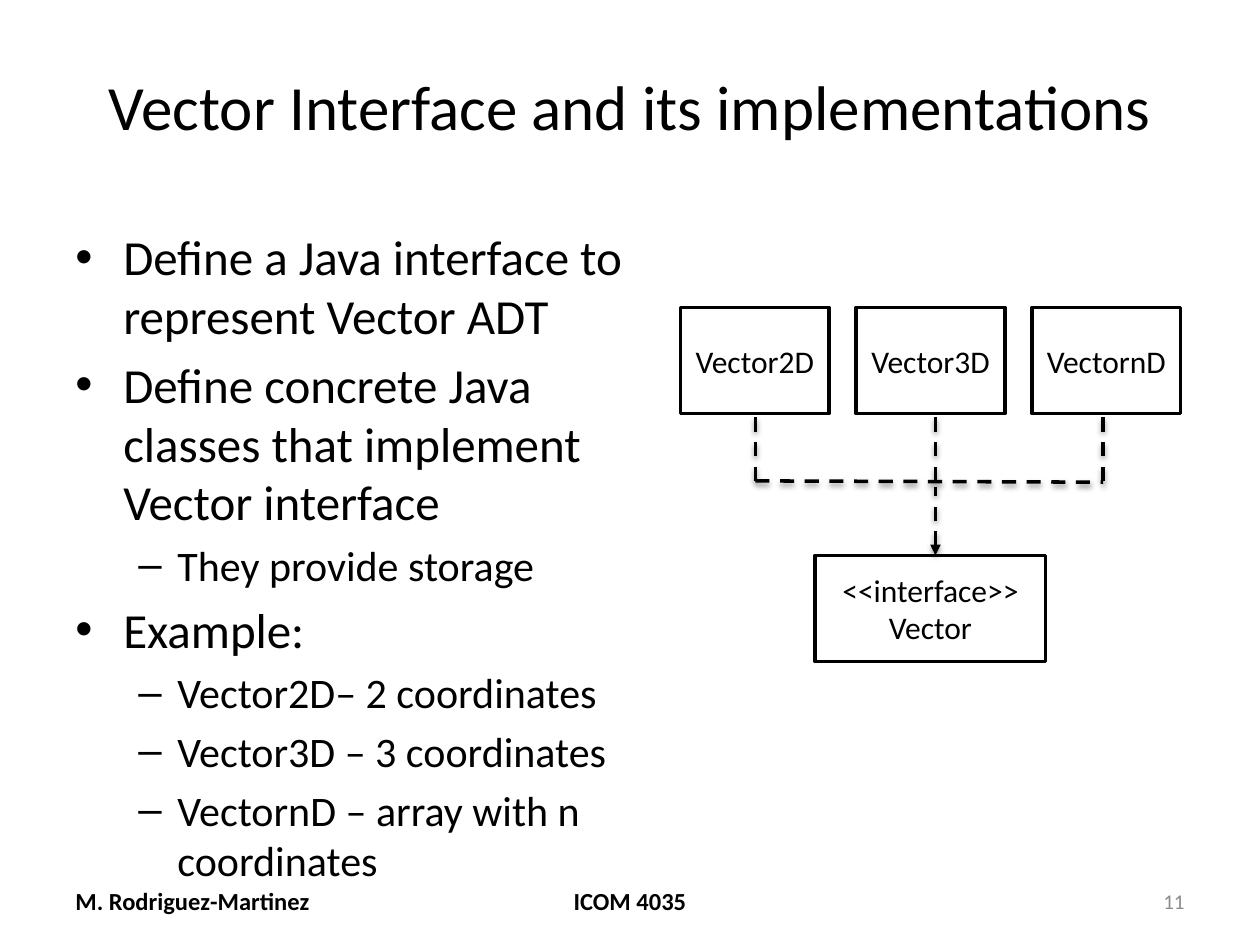
from lxml import etree
from pptx import Presentation
from pptx.dml.color import RGBColor
from pptx.enum.dml import MSO_LINE
from pptx.enum.shapes import MSO_CONNECTOR, MSO_SHAPE
from pptx.enum.text import MSO_ANCHOR, MSO_AUTO_SIZE, PP_ALIGN
from pptx.oxml.ns import qn
from pptx.util import Inches, Pt

LEFT, CENTER, RIGHT = PP_ALIGN.LEFT, PP_ALIGN.CENTER, PP_ALIGN.RIGHT
TOP, MIDDLE = MSO_ANCHOR.TOP, MSO_ANCHOR.MIDDLE
RECTANGLE, STRAIGHT = MSO_SHAPE.RECTANGLE, MSO_CONNECTOR.STRAIGHT
DASH, NO_AUTOFIT = MSO_LINE.DASH, MSO_AUTO_SIZE.NONE

COLORS = {"ink": "000000", "paper": "FFFFFF", "number": "8C8C8C"}
FONT = "Calibri"
MARGIN = 0.5
LINE_WIDTH = Pt(2)

# Per outline level: text size, left margin in inches, hanging indent, bullet
LEVELS = [(28, 0.38, 0.38, "•"), (24, 0.81, 0.31, "–")]
OUTLINE = [
    (0, "Define a Java interface to represent Vector ADT"),
    (0, "Define concrete Java classes that implement Vector interface"),
    (1, "They provide storage"),
    (0, "Example:"),
    (1, "Vector2D– 2 coordinates"),
    (1, "Vector3D – 3 coordinates"),
    (1, "VectornD – array with n coordinates"),
]
CLASSES = ["Vector2D", "Vector3D", "VectornD"]


def rgb(name):
    return RGBColor.from_string(COLORS[name])


def add_element(parent, tag, **attributes):
    return etree.SubElement(parent, qn(tag), attributes)


def write_line(paragraph, text, size, align=LEFT, color="ink", bold=False):
    paragraph.alignment = align
    run = paragraph.add_run()
    run.text = text
    font = run.font
    font.name, font.size, font.bold = FONT, Pt(size), bold
    font.color.rgb = rgb(color)


def prepare_frame(shape, anchor=MIDDLE):
    frame = shape.text_frame
    frame.word_wrap = True
    frame.auto_size = NO_AUTOFIT
    frame.vertical_anchor = anchor
    return frame


def add_frame(slide, box, anchor=MIDDLE):
    return prepare_frame(slide.shapes.add_textbox(*map(Inches, box)), anchor)


def place_title(slide, box, text):
    title = slide.shapes.title
    title.left, title.top, title.width, title.height = map(Inches, box)
    write_line(prepare_frame(title).paragraphs[0], text, 36, CENTER)


def add_outline(slide, box):
    frame = add_frame(slide, box, TOP)
    for index, (level, text) in enumerate(OUTLINE):
        paragraph = frame.add_paragraph() if index else frame.paragraphs[0]
        size, margin, hanging, bullet = LEVELS[level]
        paragraph.level = level
        write_line(paragraph, text, size)
        properties = paragraph._p.get_or_add_pPr()
        properties.set("marL", str(Inches(margin)))
        properties.set("indent", str(-Inches(hanging)))
        spacing = add_element(properties, "a:spcBef")
        add_element(spacing, "a:spcPct", val="20000")
        add_element(properties, "a:buFont", typeface="Arial")
        add_element(properties, "a:buChar", char=bullet)


def add_footer(slide, box):
    left, top, width, height = box
    side, middle = 2.33, 3.17
    parts = [
        (left, side, "M. Rodriguez-Martinez", 14, LEFT, "ink", True),
        (left + (width - middle) / 2, middle, "ICOM 4035", 14, CENTER, "ink", True),
        (left + width - side, side, "11", 12, RIGHT, "number", False),
    ]
    for x, part_width, *line in parts:
        frame = add_frame(slide, (x, top, part_width, height))
        write_line(frame.paragraphs[0], *line)


def add_class_box(slide, box, lines):
    shape = slide.shapes.add_shape(RECTANGLE, *map(Inches, box))
    shape.shadow.inherit = False
    shape.fill.solid()
    shape.fill.fore_color.rgb = rgb("paper")
    shape.line.color.rgb = rgb("ink")
    shape.line.width = LINE_WIDTH
    frame = prepare_frame(shape)
    for index, text in enumerate(lines):
        paragraph = frame.add_paragraph() if index else frame.paragraphs[0]
        write_line(paragraph, text, 18, CENTER)


def add_dashed_line(slide, start, end, arrow=False):
    """Draw a dashed line with a soft shadow; an arrow points at its start."""
    connector = slide.shapes.add_connector(STRAIGHT, *map(Inches, start + end))
    line = connector.line
    line.color.rgb = rgb("ink")
    line.width = LINE_WIDTH
    line.dash_style = DASH
    if arrow:
        add_element(line._ln, "a:headEnd", type="triangle")
    effects = add_element(connector._element.spPr, "a:effectLst")
    shadow = add_element(
        effects, "a:outerShdw", blurRad=str(Pt(3.1)), dist=str(Pt(1.6)),
        dir="5400000", rotWithShape="0")
    shadow_color = add_element(shadow, "a:srgbClr", val=COLORS["ink"])
    add_element(shadow_color, "a:alpha", val="38000")


def add_class_diagram(slide, box):
    """Implementing classes above, joined by a dashed bus to the interface."""
    left, top, width, height = box
    class_width, interface_width = 1.18, 1.83
    box_height = 0.3 * height
    pitch = (width - class_width) / (len(CLASSES) - 1)
    class_bottom = top + box_height
    interface_top = top + height - box_height
    bus = top + 0.49 * height
    stems = [left + share * width for share in (0.15, 0.51, 0.845)]

    for column, name in enumerate(CLASSES):
        add_class_box(
            slide, (left + column * pitch, top, class_width, box_height), [name])
    add_class_box(
        slide,
        (left + (width - interface_width) / 2, interface_top,
         interface_width, box_height),
        ["<<interface>>", "Vector"])

    add_dashed_line(slide, (stems[0], bus), (stems[-1], bus + 0.01))
    for stem in stems:
        add_dashed_line(slide, (stem, bus), (stem, class_bottom))
    add_dashed_line(
        slide, (stems[1], interface_top), (stems[1], bus + 0.05), arrow=True)


def main():
    presentation = Presentation()
    presentation.slide_width, presentation.slide_height = Inches(10), Inches(7.5)
    slide = presentation.slides.add_slide(presentation.slide_layouts[5])
    content_width = 10 - 2 * MARGIN
    place_title(slide, (MARGIN, 0.3, content_width, 1.07),
                "Vector Interface and its implementations")
    add_outline(slide, (MARGIN, 1.75, 4.69, 4.95))
    add_footer(slide, (MARGIN, 6.95, content_width, 0.4))
    add_class_diagram(slide, (5.4, 2.44, 3.97, 2.81))
    presentation.save("out.pptx")


if __name__ == "__main__":
    main()
